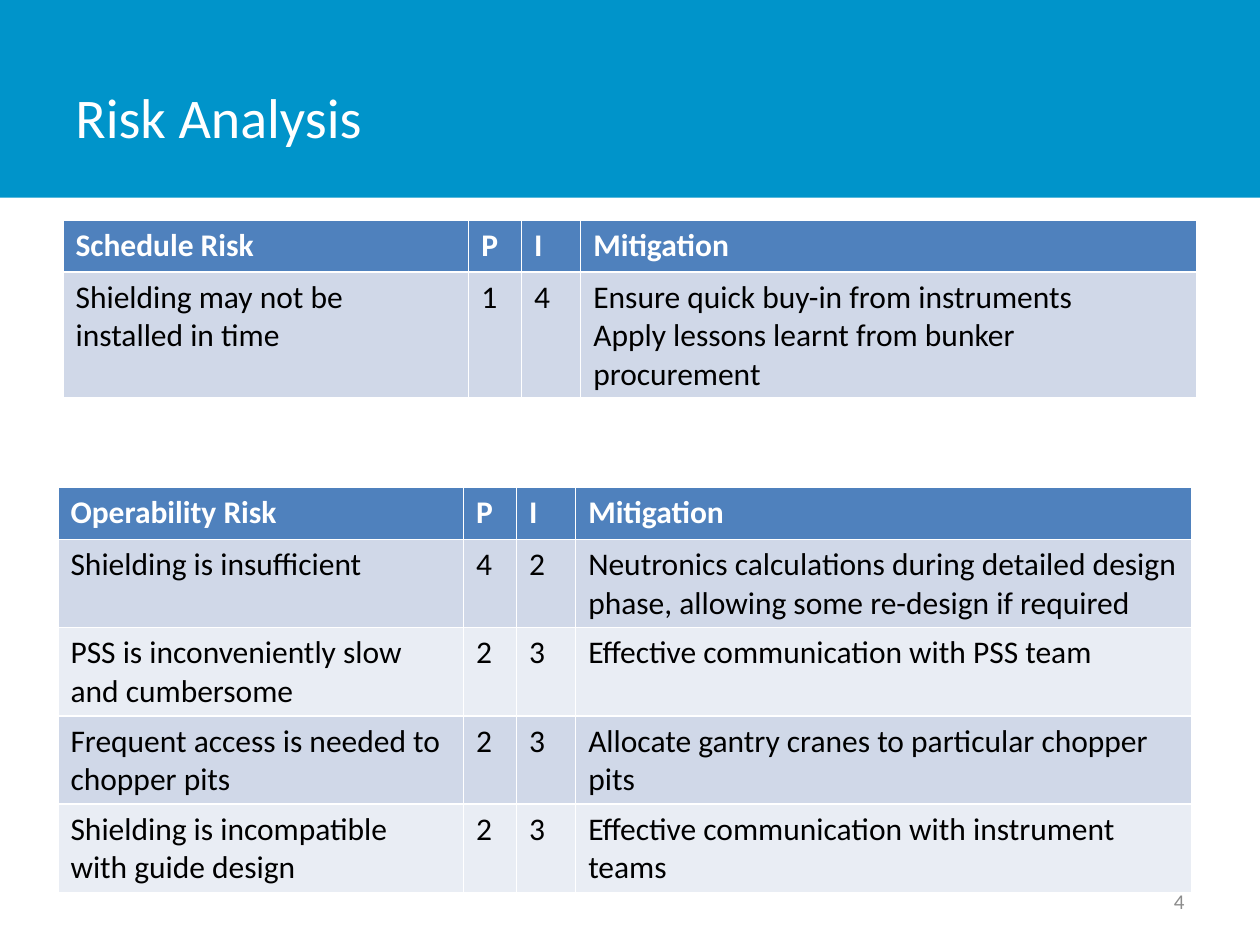
from pptx import Presentation
from pptx.dml.color import RGBColor as RGB
from pptx.enum.shapes import MSO_SHAPE as Shape
from pptx.enum.text import MSO_ANCHOR as Anchor, PP_ALIGN as Align
from pptx.util import Inches, Pt

HUES = {
    "band": "0094CA", "head": "4F81BD", "odd": "D0D8E8", "even": "E9EDF4",
    "white": "FFFFFF", "black": "000000", "grey": "8C8C8C",
}
FORMS = {
    "title": {"size": Pt(32), "bold": False, "name": "Calibri"},
    "head": {"size": Pt(18), "bold": True, "name": "Calibri"},
    "body": {"size": Pt(18), "bold": False, "name": "Calibri"},
    "page": {"size": Pt(12), "bold": False, "name": "Calibri"},
}
WIDTHS = [3.22, 0.42, 0.47, 4.89]
TABLES = [
    (0.5, 1.75, 1.41, [
        ["Schedule Risk", "P", "I", "Mitigation"],
        ["Shielding may not be installed in time", "1", "4",
         "Ensure quick buy-in from instruments\nApply lessons learnt from bunker procurement"],
    ]),
    (0.46, 3.87, 3.21, [
        ["Operability Risk", "P", "I", "Mitigation"],
        ["Shielding is insufficient", "4", "2",
         "Neutronics calculations during detailed design phase, allowing some re-design if required"],
        ["PSS is inconveniently slow and cumbersome", "2", "3",
         "Effective communication with PSS team"],
        ["Frequent access is needed to chopper pits", "2", "3",
         "Allocate gantry cranes to particular chopper pits"],
        ["Shielding is incompatible with guide design", "2", "3",
         "Effective communication with instrument teams"],
    ]),
]


def write(frame, text, form, hue, align=Align.LEFT):
    frame.text = text
    for para in frame.paragraphs:
        para.alignment = align
        for run in para.runs:
            for key, value in FORMS[form].items():
                setattr(run.font, key, value)
            run.font.color.rgb = RGB.from_string(HUES[hue])


def label(box, text, form, hue, align):
    frame = slide.shapes.add_textbox(*map(Inches, box)).text_frame
    frame.word_wrap = True
    frame.vertical_anchor = Anchor.MIDDLE
    write(frame, text, form, hue, align)


deck = Presentation()
deck.slide_width, deck.slide_height = Inches(10), Inches(7.5)
slide = deck.slides.add_slide(deck.slide_layouts[6])

band = slide.shapes.add_shape(Shape.RECTANGLE, 0, 0, Inches(10), Inches(1.57))
band.shadow.inherit = False
band.fill.solid()
band.fill.fore_color.rgb = RGB.from_string(HUES["band"])
band.line.fill.background()

label((0.5, 0.3, 7.81, 1.25), "Risk Analysis", "title", "white", Align.LEFT)
label((7.17, 6.95, 2.33, 0.4), "4", "page", "grey", Align.RIGHT)

for left, top, height, rows in TABLES:
    holder = slide.shapes.add_table(
        len(rows), len(WIDTHS), Inches(left), Inches(top), Inches(9), Inches(height))
    table = holder.table
    for column, width in zip(table.columns, WIDTHS):
        column.width = Inches(width)
    for r, row in enumerate(rows):
        table.rows[r].height = Inches(0.41)
        fill = "head" if r == 0 else "odd" if r % 2 else "even"
        form, hue = ("body", "black") if r else ("head", "white")
        for c, text in enumerate(row):
            cell = table.cell(r, c)
            cell.fill.solid()
            cell.fill.fore_color.rgb = RGB.from_string(HUES[fill])
            write(cell.text_frame, text, form, hue)
    holder.height = Inches(height)

deck.save("out.pptx")
